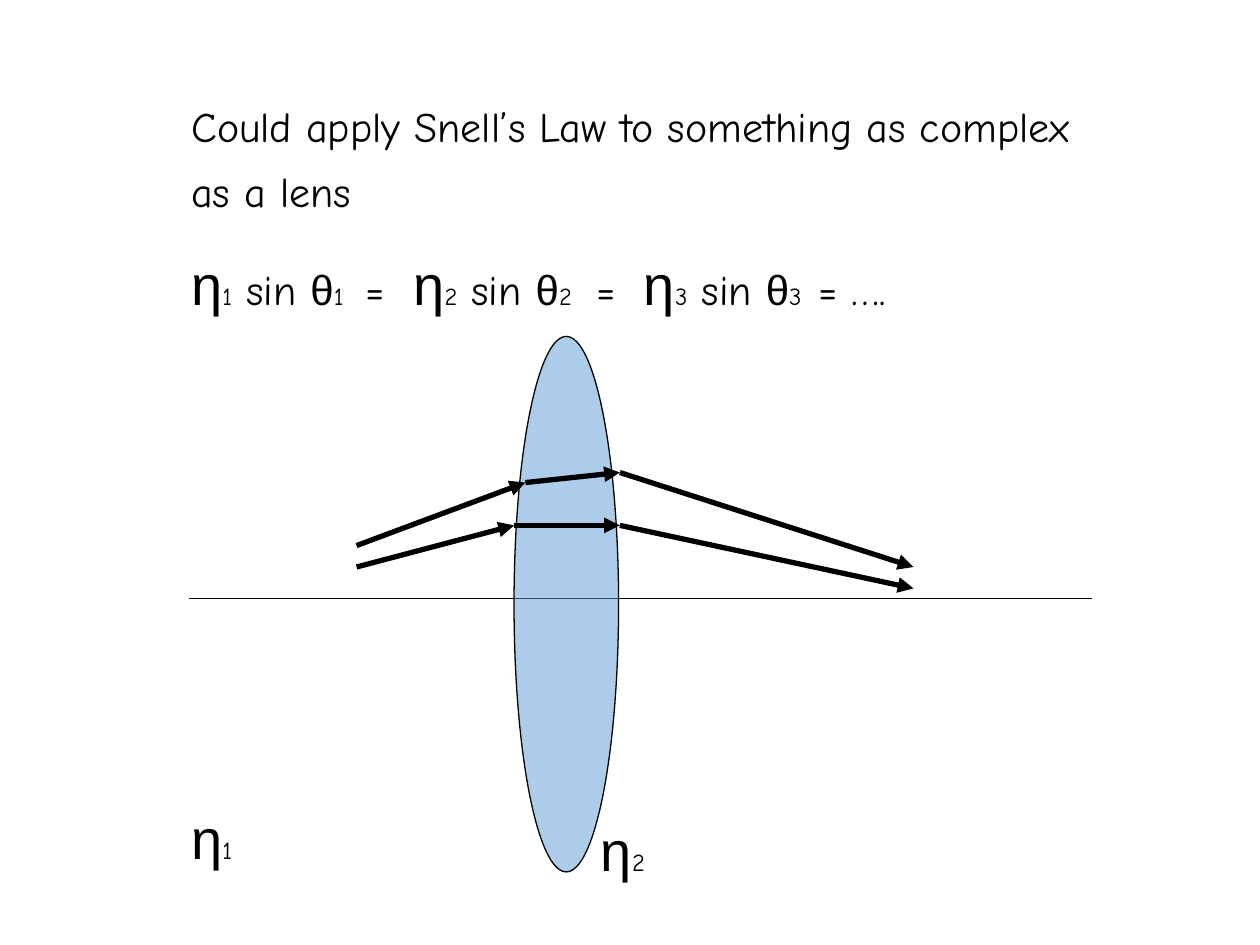
from typing import NamedTuple

from lxml import etree
from pptx import Presentation
from pptx import util as u
from pptx.dml.color import RGBColor
from pptx.enum import shapes, text
from pptx.oxml import ns

BLACK = RGBColor(0x00, 0x00, 0x00)
LENS_BLUE = RGBColor(0x5B, 0x9B, 0xD5)


class Style(NamedTuple):
    font: str
    size: float


class Span(NamedTuple):
    words: str
    style: Style


class Line(NamedTuple):
    start: tuple[float, float]
    end: tuple[float, float]
    width: float = 3
    arrow: bool = True


class Label(NamedTuple):
    left: float
    top: float
    width: float
    index: str


BODY = Style("Comic Neue", 24)
INDEX = Style("Comic Neue", 14)
THETA = Style("Arial", 24)
ETA = Style("Arial", 32)


def snell_term(index: str, gap: str, ending: str) -> list[Span]:
    return [
        Span("η", ETA),
        Span(index, INDEX),
        Span(" sin ", BODY),
        Span("θ", THETA),
        Span(index + gap, INDEX),
        Span(ending, BODY),
    ]


def add_text(page, left: float, top: float, width: float, height: float,
             lines: list[list[Span]], wrap: bool) -> None:
    box = page.shapes.add_textbox(*map(u.Inches, (left, top, width, height)))
    frame = box.text_frame
    frame.word_wrap = wrap
    frame.auto_size = text.MSO_AUTO_SIZE.SHAPE_TO_FIT_TEXT
    for number, spans in enumerate(lines):
        para = frame.add_paragraph() if number else frame.paragraphs[0]
        if number:
            para.space_before = u.Pt(18)
        for span in spans:
            run = para.add_run()
            run.text = span.words
            run.font.name = span.style.font
            run.font.size = u.Pt(span.style.size)
            run.font.color.rgb = BLACK


def add_line(page, line: Line) -> None:
    connector = page.shapes.add_connector(
        shapes.MSO_CONNECTOR.STRAIGHT, *map(u.Inches, line.start + line.end))
    connector.line.color.rgb = BLACK
    connector.line.width = u.Pt(line.width)
    if line.arrow:
        outline = connector.line._get_or_add_ln()
        etree.SubElement(outline, ns.qn("a:tailEnd"), type="triangle")
    etree.SubElement(connector._element.spPr, ns.qn("a:effectLst"))


def add_lens(page, left: float, top: float, width: float, height: float) -> None:
    lens = page.shapes.add_shape(
        shapes.MSO_SHAPE.OVAL, *map(u.Inches, (left, top, width, height)))
    lens.shadow.inherit = False
    lens.fill.solid()
    lens.fill.fore_color.rgb = LENS_BLUE
    color = lens._element.spPr.find(".//" + ns.qn("a:srgbClr"))
    etree.SubElement(color, ns.qn("a:alpha"), val="50000")
    lens.line.color.rgb = BLACK
    lens.line.width = u.Pt(0.75)


def main() -> None:
    deck = Presentation()
    deck.slide_width, deck.slide_height = u.Inches(10), u.Inches(7.5)
    page = deck.slides.add_slide(deck.slide_layouts[6])

    statement = [
        Span("Could apply Snell’s Law to something as complex as a lens", BODY),
        Span("\t", ETA),
    ]
    equation = (snell_term("1", " ", " =  ")
                + snell_term("2", "   ", "=  ")
                + snell_term("3", "  ", "= …."))
    add_text(page, 1.42, 0.75, 7.17, 3, [statement, equation], True)

    axis = Line((1.5, 4.75), (8.67, 4.75), 0.75, False)
    lower_entry, lower_exit = (4.08, 4.17), (4.92, 4.17)
    upper_entry, upper_exit = (4.17, 3.83), (4.92, 3.75)
    outgoing = [Line(lower_exit, (7.25, 4.67)), Line(upper_exit, (7.25, 4.5))]
    inside = [Line(lower_entry, lower_exit), Line(upper_entry, upper_exit)]
    incoming = [Line((2.83, 4.5), lower_entry), Line((2.83, 4.33), upper_entry)]

    add_line(page, axis)
    for label in (Label(1.42, 6.33, 0.56, "1"), Label(4.67, 6.42, 0.59, "2")):
        spans = [Span("η", ETA), Span(label.index, INDEX)]
        add_text(page, label.left, label.top, label.width, 0.63, [spans], False)
    for ray in outgoing:
        add_line(page, ray)
    add_lens(page, 4.08, 2.67, 0.83, 4.25)
    for ray in inside + incoming:
        add_line(page, ray)

    deck.save("out.pptx")


if __name__ == "__main__":
    main()
